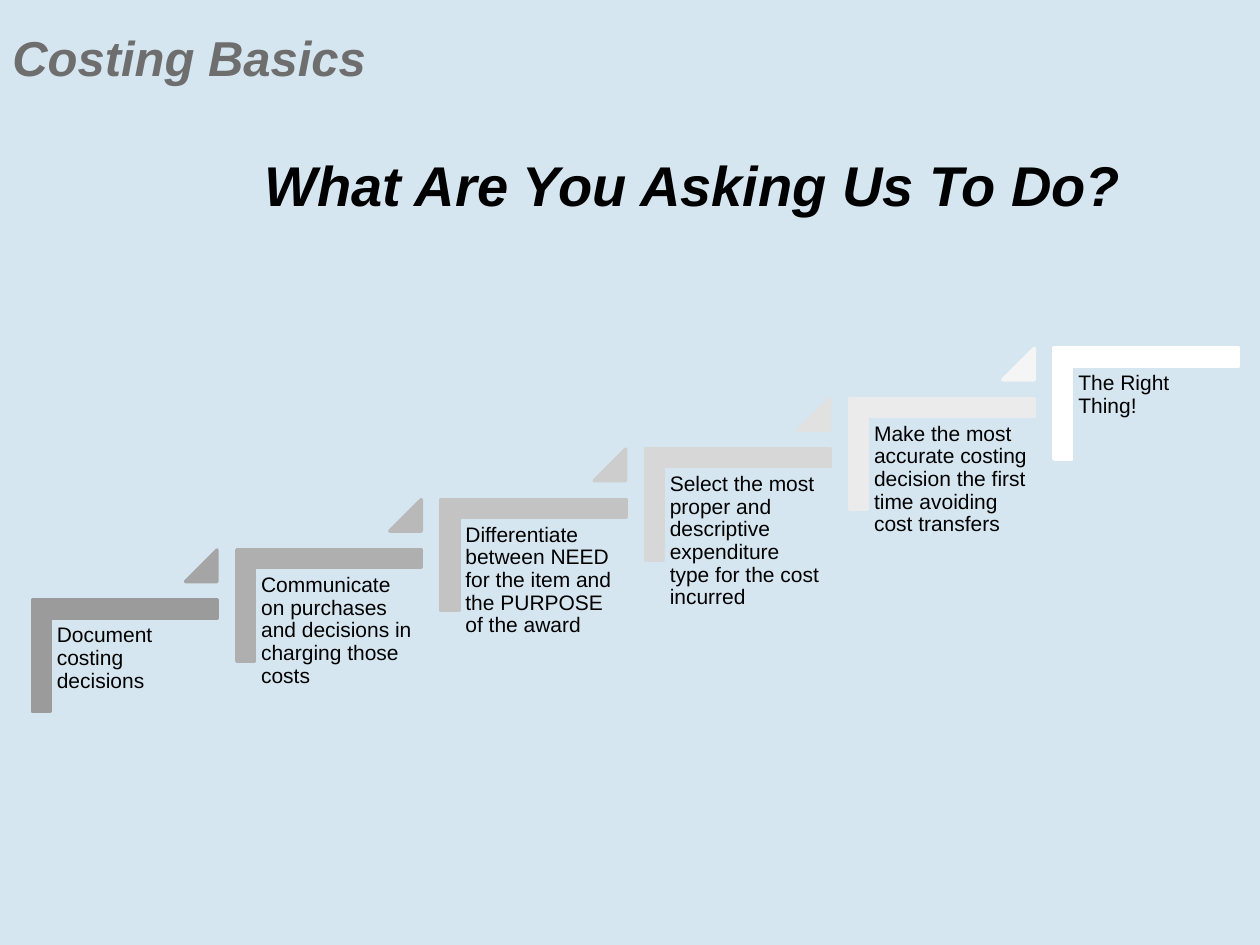
from pptx import Presentation
from pptx.dml.color import RGBColor
from pptx.enum import shapes as kinds, text as t
from pptx.util import Pt

BACKGROUND = RGBColor(0xD6, 0xE6, 0xF0)
BLACK = RGBColor(0, 0, 0)
HEADER_GREY = RGBColor(0x6E, 0x6E, 0x6E)
STAIR_GREYS = [RGBColor(level, level, level) for level in range(0x9B, 0x100, 10)]

STEPS = [
    "Document costing decisions",
    "Communicate on purchases and decisions in charging those costs",
    "Differentiate between NEED for the item and the PURPOSE of the award",
    "Select the most proper and descriptive expenditure type for the cost incurred",
    "Make the most accurate costing decision the first time avoiding cost transfers",
    "The Right Thing!",
]
STEP_RUN = 116.75
STEP_RISE = 28.82


def add_text(page, bounds, words, size, color=BLACK, heading=False, inset=3.6):
    """Add a wrapped text box and return it."""
    box = page.shapes.add_textbox(*map(Pt, bounds))
    frame = box.text_frame
    frame.word_wrap = True
    frame.margin_left = frame.margin_right = Pt(inset)
    frame.margin_top = frame.margin_bottom = Pt(3.6)
    frame.text = words
    font = frame.paragraphs[0].runs[0].font
    font.name = "Arial"
    font.size = Pt(size)
    font.bold = font.italic = heading
    font.color.rgb = color
    return box


def add_block(page, kind, bounds, color, adjustments):
    """Add a preset shape filled and outlined in one colour."""
    block = page.shapes.add_shape(kind, *map(Pt, bounds))
    block.shadow.inherit = False
    block.fill.solid()
    block.fill.fore_color.rgb = color
    block.line.color.rgb = color
    block.line.width = Pt(2)
    for index, value in enumerate(adjustments):
        block.adjustments[index] = value
    return block


def add_step(page, index, words):
    """Add one stair with its label, and a triangle leading to the next."""
    across, up = index * STEP_RUN, index * STEP_RISE
    corner = add_block(page, kinds.MSO_SHAPE.CORNER, (39.6 + across, 321.9 - up, 63.4, 105.6),
                       STAIR_GREYS[2 * index], (0.16, 0.16))
    corner.rotation = 90
    label = add_text(page, (28.9 + across, 353.5 - up, 95.2, 83.5), words, 12)
    label.text_frame.paragraphs[0].line_spacing = 0.9
    if index < len(STEPS) - 1:
        add_block(page, kinds.MSO_SHAPE.ISOSCELES_TRIANGLE, (106 + across, 314.3 - up, 18, 18),
                  STAIR_GREYS[2 * index + 1], (1,))


def main():
    """Build the costing staircase slide."""
    deck = Presentation()
    deck.slide_width, deck.slide_height = Pt(720), Pt(540)
    page = deck.slides.add_slide(deck.slide_layouts[6])
    page.background.fill.solid()
    page.background.fill.fore_color.rgb = BACKGROUND

    title = add_text(page, (72, 60, 648, 90), "What Are You Asking Us To Do?", 32,
                     heading=True, inset=0)
    title.text_frame.vertical_anchor = t.MSO_ANCHOR.MIDDLE
    title.text_frame.paragraphs[0].alignment = t.PP_ALIGN.CENTER
    for index, words in enumerate(STEPS):
        add_step(page, index, words)
    add_text(page, (0, 12, 672, 41), "Costing Basics", 28, HEADER_GREY, heading=True, inset=7.2)
    deck.save("out.pptx")


if __name__ == "__main__":
    main()
